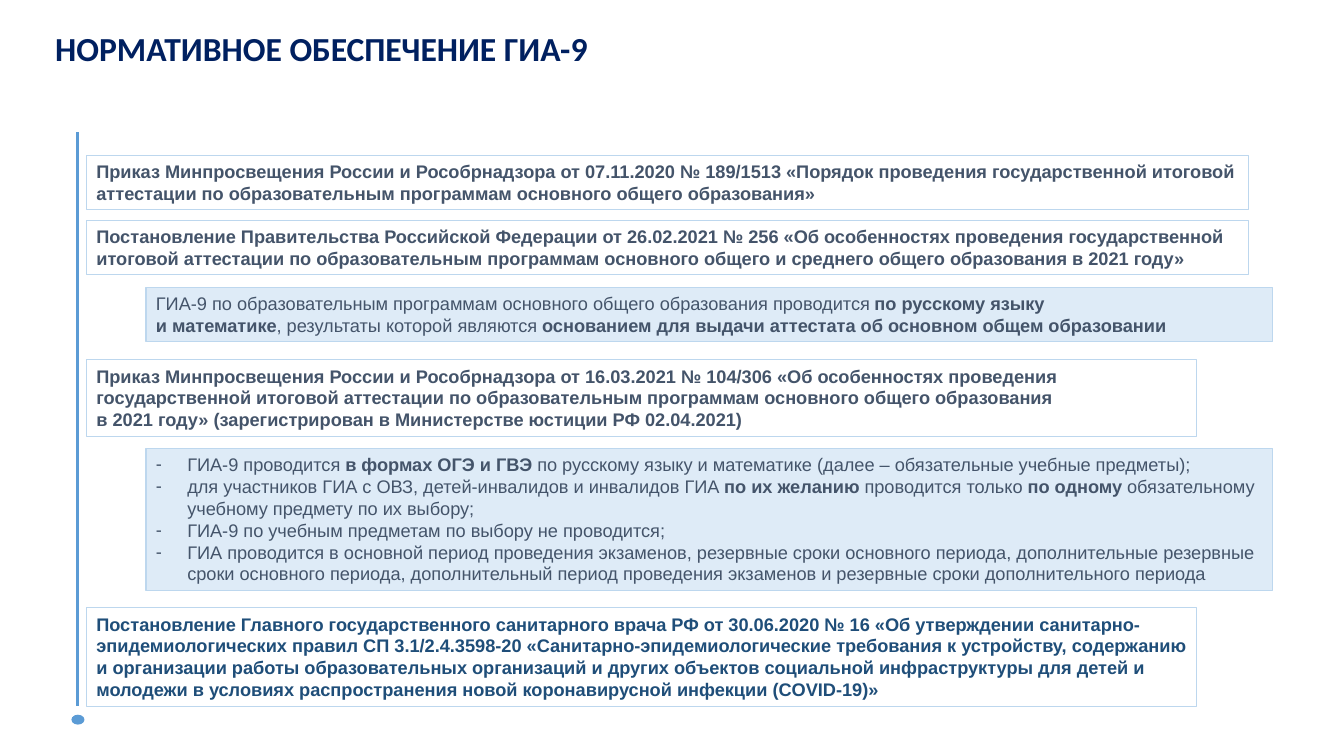
from lxml.etree import SubElement
from pptx import Presentation
from pptx.dml.color import RGBColor
from pptx.enum.shapes import MSO_CONNECTOR, MSO_SHAPE
from pptx.enum.text import MSO_ANCHOR, MSO_AUTO_SIZE, PP_ALIGN
from pptx.oxml.ns import qn
from pptx.util import Cm, Pt


def color(value):
    return RGBColor.from_string(value)


def add_span(para, text, bold, size, font, tint):
    for index, line in enumerate(text.split("\n")):
        if index:
            para.add_line_break()
        span = para.add_run()
        span.text = line
        span.font.bold = bold
        span.font.size = Pt(size)
        span.font.name = font
        span.font.color.rgb = color(tint)


SLATE, NAVY, BLUE = "44546A", "1F4E79", "5B9BD5"
PALE, BORDER = "DEEBF7", "BDD7EE"
ACT_LEFT, NOTE_LEFT = 2.18, 3.68
WIDE, NARROW, NOTE_WIDTH = 29.29, 27.97, 28.4

blocks = [
    (ACT_LEFT, 3.91, WIDE, 1.37, None, SLATE, False, [
        [("Приказ Минпросвещения России и Рособрнадзора от 07.11.2020 № 189/1513 "
          "«Порядок проведения государственной итоговой аттестации по образовательным "
          "программам основного общего образования»", True)],
    ]),
    (ACT_LEFT, 5.56, WIDE, 1.37, None, SLATE, False, [
        [("Постановление Правительства Российской Федерации от 26.02.2021 № 256 "
          "«Об особенностях проведения государственной итоговой аттестации по "
          "образовательным программам основного общего и среднего общего образования "
          "в 2021 году»", True)],
    ]),
    (NOTE_LEFT, 7.24, NOTE_WIDTH, 1.37, PALE, SLATE, False, [
        [("ГИА-9 по образовательным программам основного общего образования проводится ", False),
         ("по русскому языку\nи математике", True),
         (", результаты которой являются ", False),
         ("основанием для выдачи аттестата об основном общем образовании", True)],
    ]),
    (ACT_LEFT, 9.07, NARROW, 1.93, None, SLATE, False, [
        [("Приказ Минпросвещения России и Рособрнадзора от 16.03.2021 № 104/306 "
          "«Об особенностях проведения государственной итоговой аттестации по "
          "образовательным программам основного общего образования\n"
          "в 2021 году» (зарегистрирован в Министерстве юстиции РФ 02.04.2021)", True)],
    ]),
    (NOTE_LEFT, 11.3, NOTE_WIDTH, 3.58, PALE, SLATE, True, [
        [("ГИА-9 проводится ", False),
         ("в формах ОГЭ и ГВЭ ", True),
         ("по русскому языку и математике (далее – обязательные учебные предметы);", False)],
        [("для участников ГИА с ОВЗ, детей-инвалидов и инвалидов ГИА ", False),
         ("по их желанию ", True),
         ("проводится только ", False),
         ("по одному ", True),
         ("обязательному учебному предмету по их выбору;", False)],
        [("ГИА-9 по учебным предметам по выбору не проводится;", False)],
        [("ГИА проводится в основной период проведения экзаменов, резервные сроки "
          "основного периода, дополнительные резервные сроки основного периода, "
          "дополнительный период проведения экзаменов и резервные сроки "
          "дополнительного периода", False)],
    ]),
    (ACT_LEFT, 15.32, NARROW, 2.49, None, NAVY, False, [
        [("Постановление Главного государственного санитарного врача РФ от 30.06.2020 № 16 "
          "«Об утверждении санитарно-эпидемиологических правил СП 3.1/2.4.3598-20 "
          "«Санитарно-эпидемиологические требования к устройству, содержанию и организации "
          "работы образовательных организаций и других объектов социальной инфраструктуры "
          "для детей и молодежи в условиях распространения новой коронавирусной инфекции "
          "(COVID-19)»", True)],
    ]),
]

deck = Presentation()
deck.slide_width = Cm(33.87)
deck.slide_height = Cm(19.05)
page = deck.slides.add_slide(deck.slide_layouts[6])

title = page.shapes.add_textbox(Cm(1.14), Cm(0.56), Cm(22.15), Cm(1.3))
title.text_frame.word_wrap = True
title.text_frame.vertical_anchor = MSO_ANCHOR.MIDDLE
add_span(title.text_frame.paragraphs[0], "НОРМАТИВНОЕ ОБЕСПЕЧЕНИЕ ГИА-9",
         True, 24, "Calibri", "002060")

for left, top, width, height, fill, tint, bulleted, paragraphs in blocks:
    box = page.shapes.add_shape(MSO_SHAPE.RECTANGLE, Cm(left), Cm(top), Cm(width), Cm(height))
    box.shadow.inherit = False
    if fill:
        box.fill.solid()
        box.fill.fore_color.rgb = color(fill)
    else:
        box.fill.background()
    box.line.color.rgb = color(BORDER)
    box.line.width = Pt(0.75)
    frame = box.text_frame
    frame.word_wrap = True
    frame.auto_size = MSO_AUTO_SIZE.SHAPE_TO_FIT_TEXT
    frame.vertical_anchor = MSO_ANCHOR.TOP
    for index, spans in enumerate(paragraphs):
        para = frame.add_paragraph() if index else frame.paragraphs[0]
        para.alignment = PP_ALIGN.LEFT
        if bulleted:
            properties = para._p.get_or_add_pPr()
            properties.set("marL", str(Cm(0.79)))
            properties.set("indent", str(-Cm(0.79)))
            SubElement(properties, qn("a:buFont"), typeface="Arial")
            SubElement(properties, qn("a:buChar"), char="-")
        for text, bold in spans:
            add_span(para, text, bold, 13, "Arial", tint)

timeline = page.shapes.add_connector(MSO_CONNECTOR.STRAIGHT, Cm(1.96), Cm(3.33), Cm(1.96), Cm(17.78))
timeline.line.color.rgb = color(BLUE)
timeline.line.width = Pt(2.25)
SubElement(timeline._element.spPr, qn("a:effectLst"))

dot = page.shapes.add_shape(MSO_SHAPE.OVAL, Cm(1.8), Cm(18.01), Cm(0.33), Cm(0.25))
dot.shadow.inherit = False
dot.fill.solid()
dot.fill.fore_color.rgb = color(BLUE)
dot.line.fill.background()

deck.save("out.pptx")
